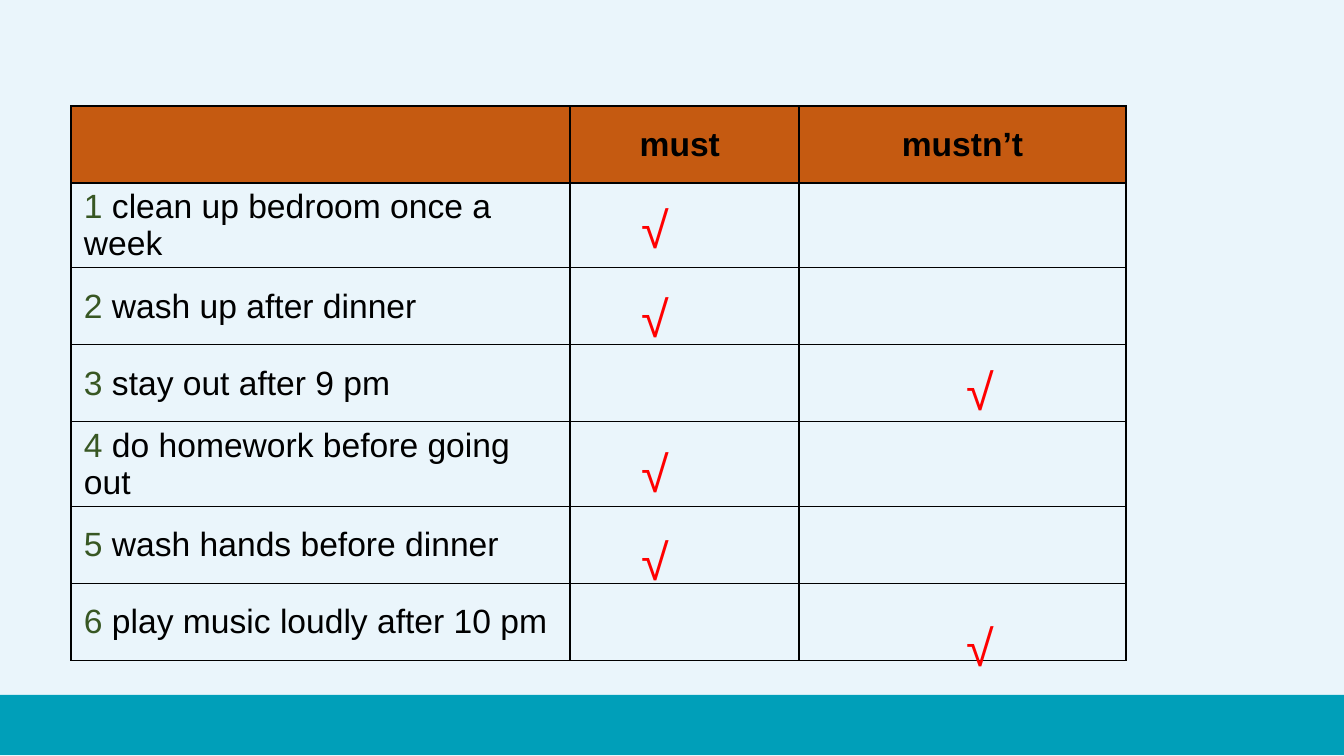
from lxml.etree import SubElement
from pptx import Presentation
from pptx.dml.color import RGBColor
from pptx.enum.shapes import MSO_SHAPE as Shape
from pptx.enum.text import MSO_ANCHOR as Anchor, MSO_AUTO_SIZE as AutoSize, PP_ALIGN as Align
from pptx.oxml.ns import qn
from pptx.util import Emu, Pt

BLACK = RGBColor(0x00, 0x00, 0x00)
GREEN = RGBColor(0x38, 0x57, 0x23)
ORANGE = RGBColor(0xC5, 0x5A, 0x11)
PALE_BLUE = RGBColor(0xEA, 0xF5, 0xFB)
RED = RGBColor(0xFF, 0x00, 0x00)
TEAL = RGBColor(0x00, 0x9F, 0xB9)

ANSWERS = ["must ", "mustn’t"]
MARK_LEFT = {"must": 632, "mustn’t": 957}
RULES = [  # wording, answer, top of its tick
    ("clean up bedroom once a week", "must", 193),
    ("wash up after dinner", "must", 282),
    ("stay out after 9 pm", "mustn’t", 355),
    ("do homework before going out", "must", 437),
    ("wash hands before dinner", "must", 525),
    ("play music loudly after 10 pm", "mustn’t", 611),
]
COLUMN_WIDTHS = [499, 229, 327]
ROW_HEIGHT = 77


def px(length):
    return Emu(round(length * 914400 / 100.8))


def add_run(paragraph, text, size, color, bold=False):
    run = paragraph.add_run()
    run.text = text
    run.font.name = "Arial"
    run.font.size = Pt(size)
    run.font.bold = bold
    run.font.color.rgb = color


prs = Presentation()
prs.slide_width, prs.slide_height = px(1344), px(756)
slide = prs.slides.add_slide(prs.slide_layouts[6])
slide.background.fill.solid()
slide.background.fill.fore_color.rgb = PALE_BLUE

footer = slide.shapes.add_shape(Shape.RECTANGLE, px(-3), px(695), px(1350), px(60))
footer.shadow.inherit = False
footer.fill.solid()
footer.fill.fore_color.rgb = TEAL
footer.line.fill.background()

# Table of house rules
row_count = len(RULES) + 1
table = slide.shapes.add_table(row_count, len(COLUMN_WIDTHS), px(71), px(106),
                               px(sum(COLUMN_WIDTHS)), px(ROW_HEIGHT * row_count)).table
table.first_row = table.horz_banding = False
for column, width in zip(table.columns, COLUMN_WIDTHS):
    column.width = px(width)
for row_index, row in enumerate(table.rows):
    row.height = px(ROW_HEIGHT)
    for cell in row.cells:
        cell.vertical_anchor = Anchor.MIDDLE
        cell.margin_left = cell.margin_right = px(13)
        cell.margin_top = cell.margin_bottom = px(5)
        properties = cell._tc.get_or_add_tcPr()
        for side in ("a:lnL", "a:lnR", "a:lnT", "a:lnB"):
            border = SubElement(properties, qn(side), w=str(Pt(1)))
            SubElement(SubElement(border, qn("a:solidFill")), qn("a:srgbClr"), val=str(BLACK))
        if row_index == 0:
            cell.fill.solid()
            cell.fill.fore_color.rgb = ORANGE
        else:
            cell.fill.background()

for column_index, answer in enumerate(ANSWERS, 1):
    heading = table.cell(0, column_index).text_frame.paragraphs[0]
    heading.alignment = Align.CENTER
    add_run(heading, answer, 24, BLACK, bold=True)

for number, (rule, answer, tick_top) in enumerate(RULES, 1):
    line = table.cell(number, 0).text_frame.paragraphs[0]
    add_run(line, str(number), 24, GREEN)
    add_run(line, f" {rule}", 24, BLACK)

    tick = slide.shapes.add_textbox(px(MARK_LEFT[answer]), px(tick_top), px(136), px(72)).text_frame
    tick.word_wrap = True
    tick.auto_size = AutoSize.SHAPE_TO_FIT_TEXT
    add_run(tick.paragraphs[0], "√", 36, RED)

prs.save("out.pptx")
